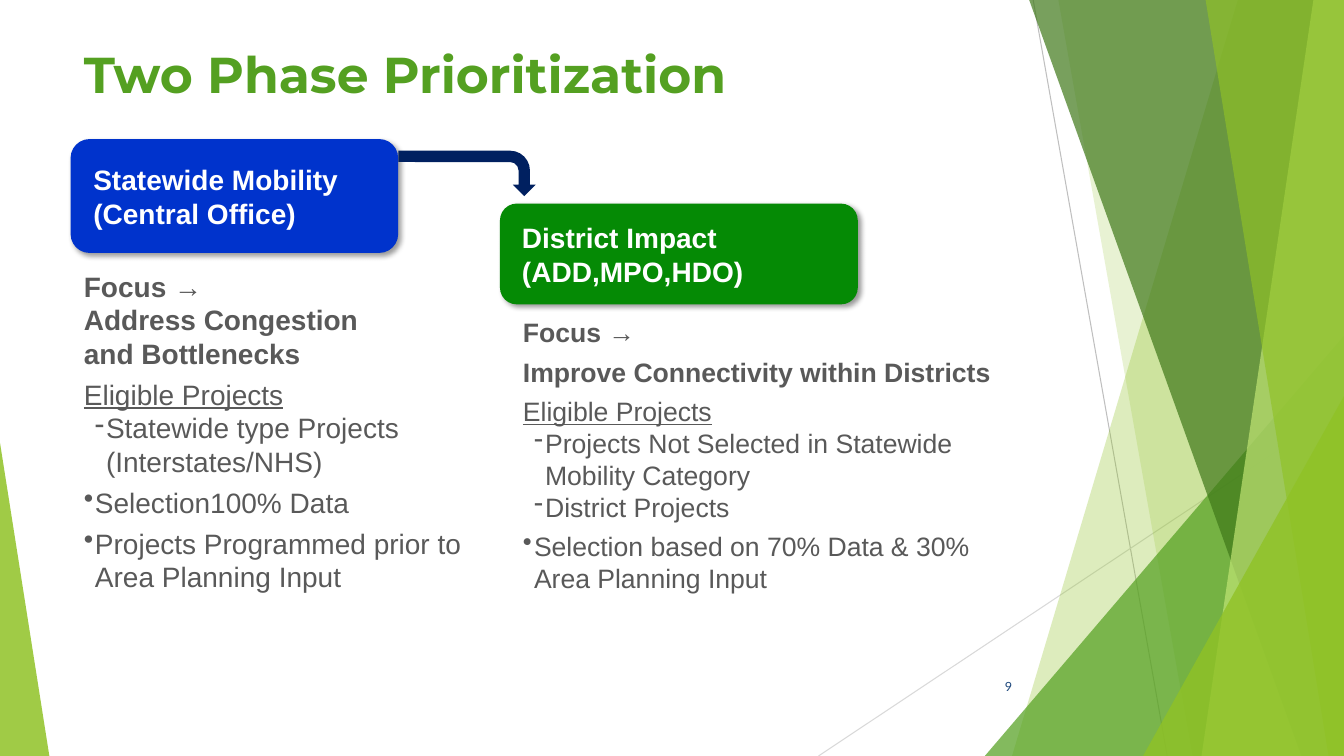
from lxml import etree
from pptx import Presentation
from pptx.dml.color import RGBColor
from pptx.enum.shapes import MSO_CONNECTOR, MSO_SHAPE
from pptx.enum.text import MSO_ANCHOR, MSO_AUTO_SIZE, PP_ALIGN
from pptx.oxml.ns import qn
from pptx.util import Inches, Pt

STRAIGHT = MSO_CONNECTOR.STRAIGHT
TRIANGLE = MSO_SHAPE.ISOSCELES_TRIANGLE
ROUNDED = MSO_SHAPE.ROUNDED_RECTANGLE
BENT_ARROW = MSO_SHAPE.BENT_ARROW
TOP, MIDDLE = MSO_ANCHOR.TOP, MSO_ANCHOR.MIDDLE
LEFT, RIGHT = PP_ALIGN.LEFT, PP_ALIGN.RIGHT
GROW = MSO_AUTO_SIZE.SHAPE_TO_FIT_TEXT

WIDTH, HEIGHT = Inches(13.33), Inches(7.5)
COLUMNS, ROWS = 40, 30
COLORS = {
    "lime": "90C226", "green": "54A021", "forest": "3F7819", "pale": "C0E474",
    "statewide": "0033CC", "district": "058A05", "arrow": "002060",
    "body": "595959", "white": "FFFFFF", "number": "1F497D", "shadow": "000000",
    "steep line": "BFBFBF", "flat line": "D9D9D9",
}
HANG = 0.11

PHASES = [
    {"box": (2.1, 5.52, 12.43, 18.32), "card": (9.75, 4.52), "body": (0.1, 4.96),
     "color": "statewide", "size": 20,
     "heading": ["Statewide Mobility", "(Central Office)"],
     "points": [("focus", "Focus → \vAddress Congestion \vand Bottlenecks"),
                ("label", "Eligible Projects"),
                ("dash", "Statewide type Projects (Interstates/NHS)"),
                ("bullet", "Selection100% Data"),
                ("bullet", "Projects Programmed prior to Area Planning Input")]},
    {"box": (14.88, 8.08, 15.54, 15.76), "card": (10.65, 4), "body": (0.39, 4.28),
     "color": "district", "size": 19,
     "heading": ["District Impact", "(ADD,MPO,HDO)"],
     "points": [("focus", "Focus →"),
                ("focus", "Improve Connectivity within Districts"),
                ("label", "Eligible Projects"),
                ("dash", "Projects Not Selected in Statewide Mobility Category"),
                ("dash", "District Projects"),
                ("bullet", "Selection based on 70% Data & 30% Area Planning Input")]},
]


def col(count):
    """Return the length of a number of grid columns."""
    return round(WIDTH * count / COLUMNS)


def row(count):
    """Return the length of a number of grid rows."""
    return round(HEIGHT * count / ROWS)


def place(box):
    """Turn a grid box into left, top, width and height."""
    left, top, width, height = box
    return col(left), row(top), col(width), row(height)


def rgb(name):
    """Look up a named colour."""
    return RGBColor.from_string(COLORS[name])


def paint(shape, color, opacity=100):
    """Fill a shape without outline or shadow."""
    shape.shadow.inherit = False
    shape.line.fill.background()
    shape.fill.solid()
    shape.fill.fore_color.rgb = rgb(color)
    if opacity < 100:
        tint = shape.fill._xPr.find(".//" + qn("a:srgbClr"))
        etree.SubElement(tint, qn("a:alpha"), val=str(opacity * 1000))


def cast_shadow(shape):
    """Give a shape a soft shadow to the lower right."""
    effects = shape._element.spPr.find(qn("a:effectLst"))
    outer = etree.SubElement(effects, qn("a:outerShdw"), blurRad=str(Pt(4)),
                             dist=str(Pt(3)), dir="2700000", algn="tl", rotWithShape="0")
    shade = etree.SubElement(outer, qn("a:srgbClr"), val=COLORS["shadow"])
    etree.SubElement(shade, qn("a:alpha"), val="40000")


def style(paragraph, font, size, color, bold=False, underline=False):
    """Format every run of a paragraph."""
    for run in paragraph.runs:
        run.font.name, run.font.size = font, Pt(size)
        run.font.bold, run.font.underline = bold, underline
        run.font.color.rgb = rgb(color)


def hang(paragraph, mark, level):
    """Indent a paragraph behind a bullet mark."""
    properties = paragraph._p.get_or_add_pPr()
    properties.set("marL", str(Inches(HANG * level)))
    properties.set("indent", str(-Inches(HANG)))
    etree.SubElement(properties, qn("a:buChar"), char=mark)


def facets(slide, box):
    """Draw the crystal background over the given box."""
    left, top, width, height = box
    right, bottom = left + width, top + height

    def line(color, x1, y1, x2, y2):
        """Draw one hairline."""
        hairline = slide.shapes.add_connector(
            STRAIGHT, col(left + x1), row(top + y1), col(left + x2), row(top + y2))
        hairline.line.color.rgb = rgb(color)
        hairline.line.width = Pt(0.75)
        etree.SubElement(hairline._element.spPr, qn("a:effectLst"))

    def pane(color, opacity, upper, lower):
        """Draw a pane from a slanted edge to the right side."""
        outline = slide.shapes.build_freeform(col(left + upper), row(top))
        outline.add_line_segments([(col(right), row(top)), (col(right), row(bottom)),
                                   (col(left + lower), row(bottom))])
        paint(outline.convert_to_shape(), color, opacity)

    def corner(color, opacity, start, span, peak, apex):
        """Draw a triangle standing on the bottom edge."""
        wedge = slide.shapes.add_shape(
            TRIANGLE, *place((left + start, top + peak, span, height - peak)))
        wedge.adjustments[0] = apex
        paint(wedge, color, opacity)

    line("steep line", 30.75, 0, 34.74, height)
    line("flat line", width, 16.12, 24.36, height)
    pane("lime", 30, 36.84, 30.12)
    pane("lime", 20, 31.5, 35.49)
    corner("green", 72, 29.31, 10.69, 13.32, 1)
    pane("forest", 70, 30.63, 38.73)
    pane("pale", 70, 39.09, 35.76)
    pane("lime", 65, 35.88, 39.54)
    corner("lime", 80, 34.02, 5.98, 15.72, 1)
    corner("lime", 85, 0, 1.47, 17.56, 0)


def caption(slide, box, text, font, size, color, bold, align, anchor):
    """Write a single line into the given box."""
    frame = slide.shapes.add_textbox(*place(box)).text_frame
    frame.word_wrap, frame.vertical_anchor = True, anchor
    frame.text = text
    frame.paragraphs[0].alignment = align
    style(frame.paragraphs[0], font, size, color, bold)


def phase_card(slide, box, color, heading):
    """Draw the coloured heading card of a phase."""
    card = slide.shapes.add_shape(ROUNDED, *place(box))
    paint(card, color)
    cast_shadow(card)
    frame = card.text_frame
    frame.word_wrap, frame.vertical_anchor = True, MIDDLE
    frame.margin_left = Inches(0.17)
    frame.text = "\n".join(heading)
    for paragraph in frame.paragraphs:
        paragraph.alignment = LEFT
        style(paragraph, "Arial", 20, "white", True)


def phase_body(slide, box, size, points):
    """List the focus and the projects of a phase."""
    frame = slide.shapes.add_textbox(*place(box)).text_frame
    frame.word_wrap, frame.auto_size = True, GROW
    frame.text = "\n".join(text for _, text in points)
    for paragraph, (kind, _) in zip(frame.paragraphs, points):
        paragraph.space_before = Pt(0 if kind == "dash" else 5.2)
        style(paragraph, "Arial", size, "body", kind == "focus", kind == "label")
        if kind == "dash":
            hang(paragraph, "-", 2)
        elif kind == "bullet":
            hang(paragraph, "•", 1)


def phase_column(slide, phase):
    """Place the card and the list of a phase in its box."""
    left, top, width, height = phase["box"]
    inset, drop = phase["body"]
    phase_card(slide, (left, top, *phase["card"]), phase["color"], phase["heading"])
    phase_body(slide, (left + inset, top + drop, width - inset, height - drop),
               phase["size"], phase["points"])


def phase_arrow(slide, box):
    """Draw the arrow that turns down within the given box."""
    left, top, width, height = place(box)
    arrow = slide.shapes.add_shape(BENT_ARROW, left + (width - height) // 2,
                                   top + (height - width) // 2, height, width)
    arrow.rotation = 90
    paint(arrow, "arrow")


def main():
    """Build and save the slide."""
    deck = Presentation()
    deck.slide_width, deck.slide_height = WIDTH, HEIGHT
    slide = deck.slides.add_slide(deck.slide_layouts[6])
    facets(slide, (0, 0, COLUMNS, ROWS))
    caption(slide, (2.2, 1.52, 24.09, 3.12), "Two Phase Prioritization",
            "Montserrat", 36, "green", True, LEFT, TOP)
    caption(slide, (28.17, 26.44, 2.25, 1.6), "9", "Lato", 9, "number", False, RIGHT, MIDDLE)
    for phase in PHASES:
        phase_column(slide, phase)
    phase_arrow(slide, (11.86, 5.98, 4.08, 1.8))
    deck.save("out.pptx")


if __name__ == "__main__":
    main()
